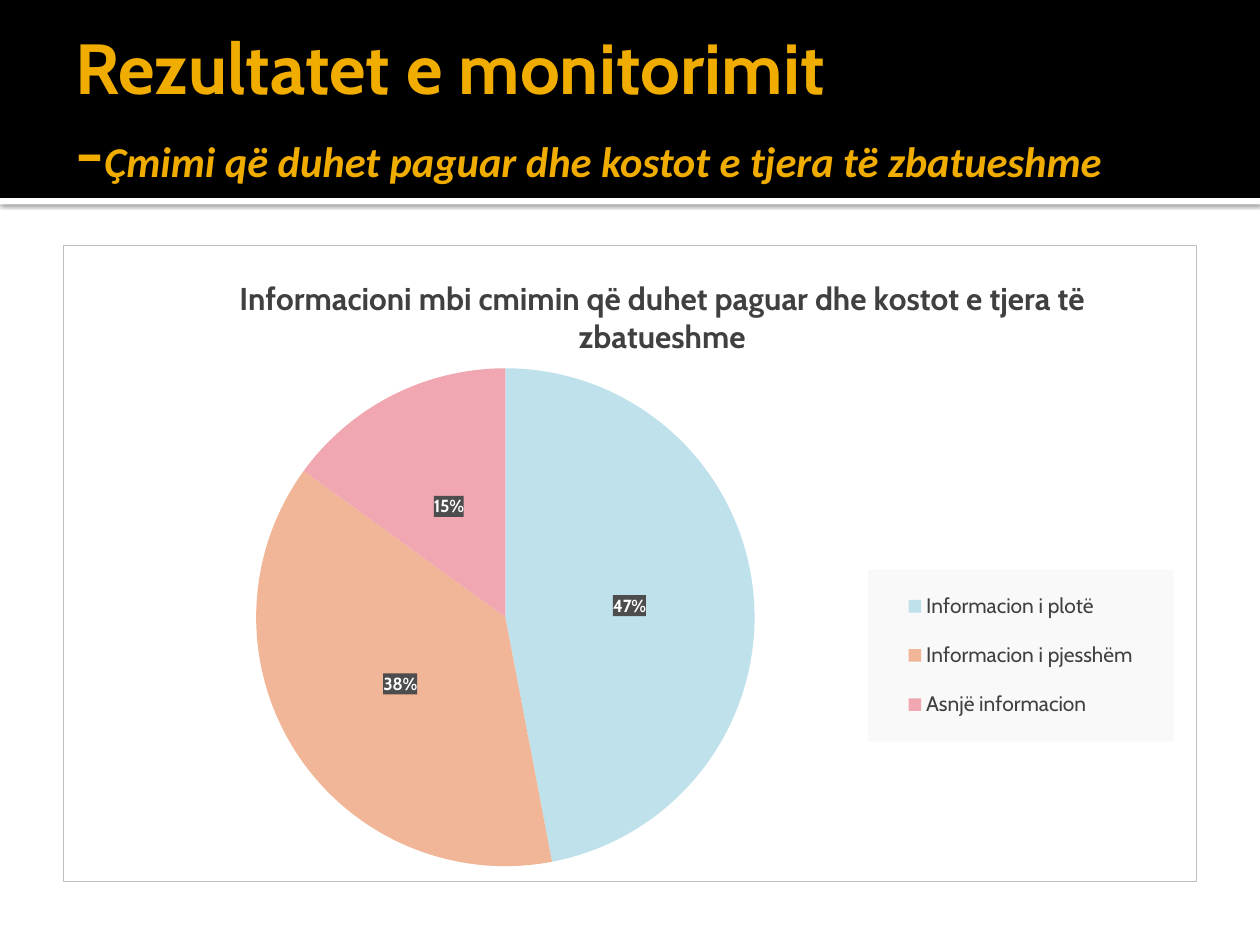
from lxml import etree
from pptx import Presentation
from pptx.chart.data import CategoryChartData
from pptx.dml.color import RGBColor
from pptx.enum.chart import XL_CHART_TYPE, XL_LABEL_POSITION, XL_LEGEND_POSITION
from pptx.enum.shapes import MSO_SHAPE
from pptx.enum.text import MSO_ANCHOR
from pptx.oxml import parse_xml
from pptx.oxml.ns import nsdecls, qn
from pptx.util import Cm, Pt

PIE = XL_CHART_TYPE.PIE
CENTER = XL_LABEL_POSITION.CENTER
RIGHT = XL_LEGEND_POSITION.RIGHT
RECTANGLE = MSO_SHAPE.RECTANGLE
MIDDLE = MSO_ANCHOR.MIDDLE

COLORS = {
    "black": "000000",
    "white": "FFFFFF",
    "gold": "F0AD00",
    "text": "404040",
    "border": "BFBFBF",
    "label": "4D4D4D",
    "legend": "F9F9F9",
    "full": "BFE1EB",
    "partial": "F1B697",
    "none": "F0A7B1",
}
ANSWERS = [
    ("Informacion i plotë", 47, "full"),
    ("Informacion i pjesshëm", 38, "partial"),
    ("Asnjë informacion", 15, "none"),
]


def rgb(name):
    return RGBColor.from_string(COLORS[name])


def style_font(font, size, color, bold=False, italic=False, name="Cabin"):
    font.name, font.size = name, Pt(size)
    font.bold, font.italic = bold, italic
    font.color.rgb = rgb(color)


def add_band(slide, top, height, color):
    band = slide.shapes.add_shape(RECTANGLE, 0, Cm(top), Cm(25.4), Cm(height))
    band.shadow.inherit = False
    band.fill.solid()
    band.fill.fore_color.rgb = rgb(color)
    band.line.fill.background()
    return band


def add_shadow(shape):
    effects = shape.element.spPr.find(qn("a:effectLst"))
    effects.append(parse_xml(
        f'<a:outerShdw {nsdecls("a")} blurRad="31750" dist="10160" dir="5400000">'
        f'<a:srgbClr val="{COLORS["black"]}"><a:alpha val="60000"/></a:srgbClr>'
        '</a:outerShdw>'))


def add_heading(slide):
    heading = slide.shapes.add_textbox(Cm(1.27), Cm(0.43), Cm(22.86), Cm(3.48))
    frame = heading.text_frame
    frame.word_wrap = True
    frame.vertical_anchor = MIDDLE
    frame.margin_left = Cm(0.25)
    frame.margin_right = frame.margin_top = frame.margin_bottom = Cm(0.13)
    paragraph = frame.paragraphs[0]

    def add_run(text, size, **style):
        run = paragraph.add_run()
        run.text = text
        style_font(run.font, size, "gold", bold=True, **style)

    add_run("Rezultatet e monitorimit", 40.5)
    paragraph.add_line_break()
    add_run("-", 39.6)
    add_run("Ҫmimi që duhet paguar dhe kostot e tjera të zbatueshme", 24.3,
            italic=True, name="Calibri")


def place(layout_parent, following, inner=False, **box):
    for old in layout_parent.findall(qn("c:layout")):
        layout_parent.remove(old)
    layout = parse_xml(f'<c:layout {nsdecls("c")}><c:manualLayout/></c:layout>')
    manual = layout[0]
    settings = {"layoutTarget": "inner"} if inner else {}
    settings.update(xMode="edge", yMode="edge", **box)
    for tag, value in settings.items():
        etree.SubElement(manual, qn(f"c:{tag}")).set("val", str(value))
    layout_parent.find(qn(following)).addprevious(layout)


def shape_properties(fill=None, line=None):
    def solid(color):
        return f'<a:solidFill><a:srgbClr val="{COLORS[color]}"/></a:solidFill>'

    filling = solid(fill) if fill else "<a:noFill/>"
    outline = f'<a:ln w="9525">{solid(line)}</a:ln>' if line else ""
    return parse_xml(f'<c:spPr {nsdecls("c", "a")}>{filling}{outline}</c:spPr>')


def add_price_chart(slide):
    data = CategoryChartData()
    data.categories = [answer for answer, _, _ in ANSWERS]
    data.add_series("Series 1", [share for _, share, _ in ANSWERS])
    chart = slide.shapes.add_chart(
        PIE, Cm(1.27), Cm(4.93), Cm(22.86), Cm(12.85), data).chart
    style_font(chart.font, 10, "black")
    chart.element.find(qn("c:txPr")).addprevious(shape_properties(line="border"))

    chart.has_title = True
    title = chart.chart_title.text_frame.paragraphs[0].add_run()
    title.text = "Informacioni mbi cmimin që duhet paguar dhe kostot e tjera të zbatueshme"
    style_font(title.font, 18, "text", bold=True)
    chart.chart_title.include_in_layout = False
    place(chart.element.chart.find(qn("c:title")), "c:overlay", x=0.15, y=0.04)

    plot = chart.plots[0]
    plot.vary_by_categories = True
    place(chart.element.chart.plotArea, "c:pieChart", inner=True,
          x=0.17, y=0.19, w=0.44, h=0.79)
    shares = plot.series[0]
    for index, (_, _, color) in enumerate(ANSWERS):
        fill = shares.points[index].format.fill
        fill.solid()
        fill.fore_color.rgb = rgb(color)

    labels = shares.data_labels
    labels.show_percentage = True
    labels.show_value = False
    labels.number_format = "0%"
    labels.number_format_is_linked = False
    labels.position = CENTER
    style_font(labels.font, 10, "white", bold=True)
    label_element = chart.element.find(".//" + qn("c:dLbls"))
    label_element.find(qn("c:txPr")).addprevious(shape_properties(fill="label"))

    chart.has_legend = True
    legend = chart.legend
    legend.position = RIGHT
    legend.include_in_layout = False
    style_font(legend.font, 12, "text")
    legend_element = chart.element.chart.find(qn("c:legend"))
    place(legend_element, "c:overlay", x=0.71, y=0.51, w=0.27, h=0.27)
    legend_element.find(qn("c:txPr")).addprevious(shape_properties(fill="legend"))


def main():
    presentation = Presentation()
    presentation.slide_width, presentation.slide_height = Cm(25.4), Cm(19.05)
    slide = presentation.slides.add_slide(presentation.slide_layouts[6])
    add_shadow(add_band(slide, 3.99, 0.13, "white"))
    add_band(slide, 0, 3.99, "black")
    add_heading(slide)
    add_price_chart(slide)
    presentation.save("out.pptx")


if __name__ == "__main__":
    main()
